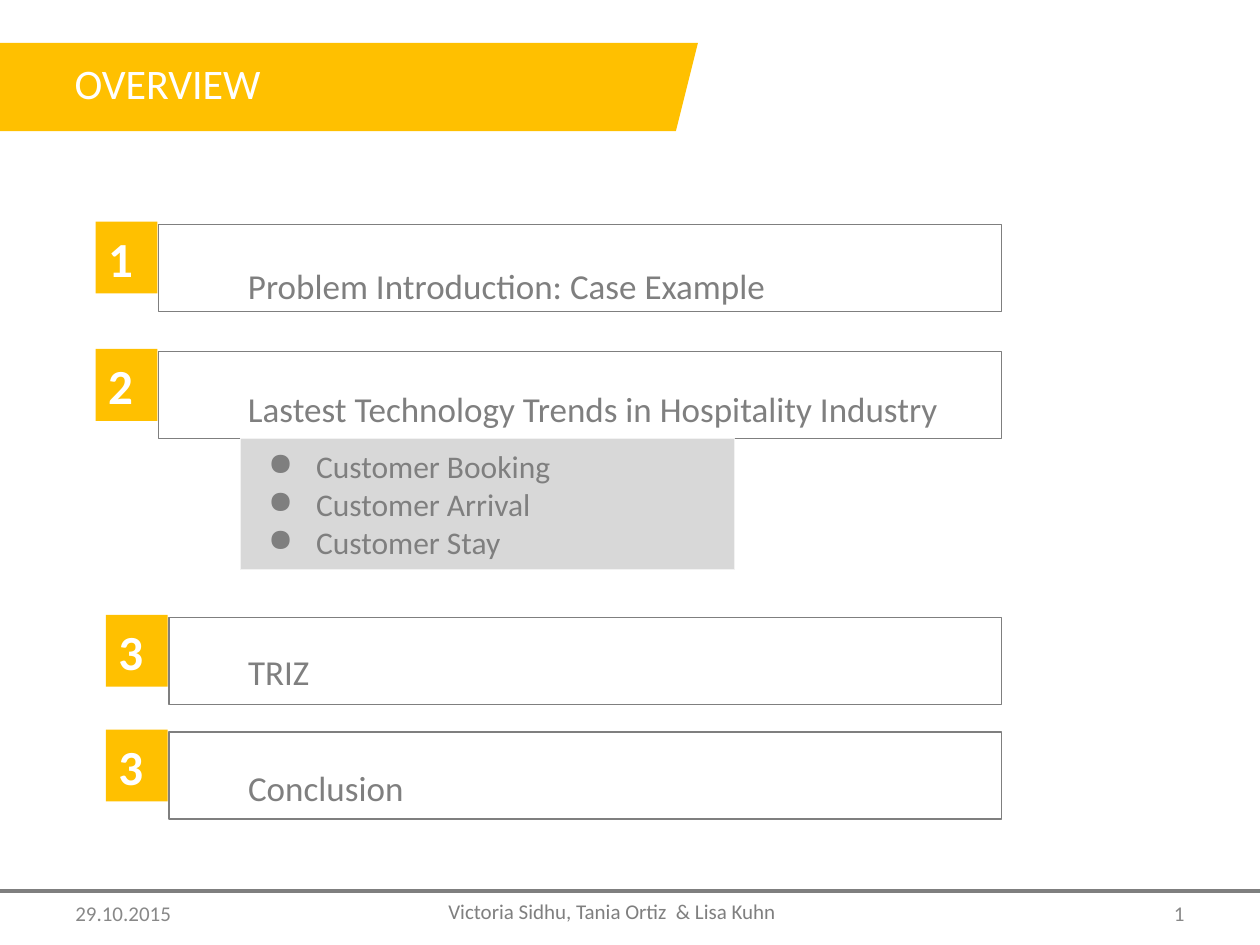
"""Build the overview slide: title banner, numbered agenda and footer."""
from typing import NamedTuple, Optional

import lxml.etree
import pptx
import pptx.dml.color
import pptx.enum.shapes
import pptx.enum.text
import pptx.oxml.ns
import pptx.util

Inches = pptx.util.Inches
Shape = pptx.enum.shapes.MSO_SHAPE
Align = pptx.enum.text.PP_ALIGN
Anchor = pptx.enum.text.MSO_ANCHOR

COLORS = {
    "gold": "FFC000",
    "gray": "7F7F7F",
    "foot": "888888",
    "panel": "D8D8D8",
    "edge": "F2F2F2",
    "white": "FFFFFF",
}


class Area(NamedTuple):
    left: float
    top: float
    width: float
    height: float


class Item(NamedTuple):
    number: str
    label: str
    left: float
    top: float
    drop: float
    width: float


class Note(NamedTuple):
    text: str
    area: Area
    color: str
    align: Align
    anchor: Anchor


RIGHT = 7.95
ITEMS = [
    Item("1", "Problem Introduction: Case Example", 1.26, 1.78, 0.10, 5.6),
    Item("2", "Lastest Technology Trends in Hospitality Industry", 1.26, 2.79, 0.07, 6.13),
    Item("3", "TRIZ", 1.34, 4.9, 0.05, 3.41),
    Item("3", "Conclusion", 1.34, 5.81, 0.06, 3.41),
]
STAGES = ["Customer Booking", "Customer Arrival", "Customer Stay"]
NOTES = [
    Note("29.10.2015", Area(0.5, 7.05, 2.33, 0.4), "foot", Align.LEFT, Anchor.MIDDLE),
    Note("Victoria Sidhu, Tania Ortiz  & Lisa Kuhn", Area(3.46, 7.08, 3.28, 0.3),
         "gray", Align.LEFT, Anchor.TOP),
    Note("1", Area(7.17, 7.05, 2.33, 0.4), "foot", Align.RIGHT, Anchor.MIDDLE),
]


def tint(name: str) -> pptx.dml.color.RGBColor:
    """Return the named colour."""
    return pptx.dml.color.RGBColor.from_string(COLORS[name])


def write(shape, text: str, *, size: float, color: str, bold: bool = False,
          align: Align = Align.LEFT, anchor: Anchor = Anchor.TOP,
          space: Optional[float] = None, margin: float = 0, indent: float = 0,
          bullet: Optional[str] = None) -> None:
    """Fill a shape with one formatted paragraph per line of text."""
    frame = shape.text_frame
    frame.word_wrap = True
    frame.vertical_anchor = anchor
    frame.text = text
    for para in frame.paragraphs:
        para.alignment = align
        if space:
            para.line_spacing = space
        props = para._p.get_or_add_pPr()
        props.set("marL", str(Inches(margin)))
        props.set("indent", str(Inches(indent)))
        if bullet:
            mark = lxml.etree.SubElement(props, pptx.oxml.ns.qn("a:buChar"))
            mark.set("char", bullet)
        for run in para.runs:
            run.font.name = "Calibri"
            run.font.size = pptx.util.Pt(size)
            run.font.bold = bold
            run.font.color.rgb = tint(color)


def block(slide, area: Area, kind: Shape = Shape.RECTANGLE,
          fill: Optional[str] = None, line: Optional[str] = None):
    """Add a flat preset shape."""
    shape = slide.shapes.add_shape(kind, *map(Inches, area))
    shape.shadow.inherit = False
    if fill:
        shape.fill.solid()
        shape.fill.fore_color.rgb = tint(fill)
    else:
        shape.fill.background()
    if line:
        shape.line.color.rgb = tint(line)
        shape.line.width = pptx.util.Pt(0.75)
    else:
        shape.line.fill.background()
    return shape


def label(slide, area: Area):
    """Add an empty text box."""
    return slide.shapes.add_textbox(*map(Inches, area))


def entry(slide, item: Item) -> None:
    """Draw one agenda row with its frame, badge and label."""
    block(slide, Area(item.left, item.top, RIGHT - item.left, 0.69), line="gray")
    badge = block(slide, Area(item.left - 0.5, item.top - 0.02, 0.49, 0.57), fill="gold")
    write(badge, item.number, size=28, color="white", bold=True,
          align=Align.JUSTIFY, anchor=Anchor.MIDDLE)
    box = label(slide, Area(1.87, item.top + item.drop, item.width, 0.61))
    write(box, item.label, size=20, color="gray", space=1.5)


def rule(slide, top: float) -> None:
    """Draw the footer line across the slide."""
    line = slide.shapes.add_connector(
        pptx.enum.shapes.MSO_CONNECTOR.STRAIGHT,
        Inches(0), Inches(top), Inches(10), Inches(top))
    line.line.color.rgb = tint("gray")
    line.line.width = pptx.util.Pt(2)
    lxml.etree.SubElement(line._element.spPr, pptx.oxml.ns.qn("a:effectLst"))


def main() -> None:
    """Build and save the slide."""
    deck = pptx.Presentation()
    deck.slide_width, deck.slide_height = Inches(10), Inches(7.5)
    slide = deck.slides.add_slide(deck.slide_layouts[6])

    banner = block(slide, Area(-0.59, 0.34, 6.13, 0.7), Shape.PARALLELOGRAM, fill="gold")
    banner.adjustments[0] = 0.25
    write(banner, "OVERVIEW", size=24, color="white", indent=0.5)

    for item in ITEMS:
        entry(slide, item)

    panel = block(slide, Area(1.91, 3.48, 3.92, 1.04), fill="panel", line="edge")
    write(panel, "\n".join(STAGES), size=18, color="gray", anchor=Anchor.MIDDLE,
          margin=0.5, indent=-0.38, bullet="●")

    rule(slide, 7.07)
    for note in NOTES:
        write(label(slide, note.area), note.text, size=12, color=note.color,
              align=note.align, anchor=note.anchor)
    deck.save("out.pptx")


if __name__ == "__main__":
    main()
